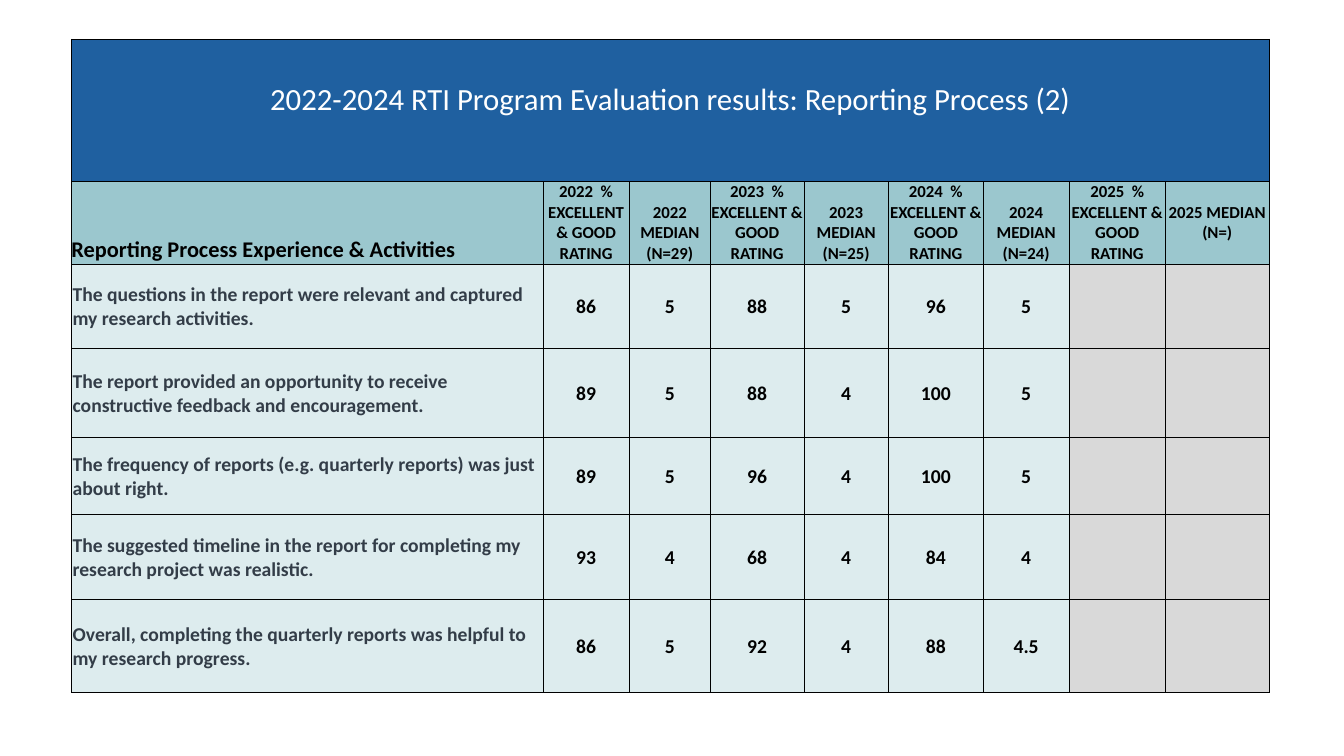
"""Build the reporting process evaluation slide with its results table."""
import collections
import pptx
import pptx.dml.color
import pptx.enum.text
import pptx.oxml
import pptx.oxml.ns
import pptx.util

Cm = pptx.util.Cm
ALIGN = pptx.enum.text.PP_ALIGN
ANCHOR = pptx.enum.text.MSO_ANCHOR

Theme = collections.namedtuple(
    "Theme", "font banner header body pending white black slate "
             "title_size topic_size heading_size body_size border_width")
theme = Theme("Calibri", "1F60A0", "9BC7CE", "DDECEE", "D9D9D9", "FFFFFF", "000000", "333D48",
              22, 16, 12, 14, 0.5)

column_widths = [11.88, 2.18, 2.04, 2.36, 2.13, 2.39, 2.16, 2.43, 2.61]
row_heights = [3.58, 2.08, 2.13, 2.24, 1.95, 2.14, 2.34]
respondents = {2022: "29", 2023: "25", 2024: "24", 2025: ""}
ratings = [
    ("The questions in the report were relevant and captured my research activities.",
     "86", "5", "88", "5", "96", "5"),
    ("The report provided an opportunity to receive constructive feedback and encouragement.",
     "89", "5", "88", "4", "100", "5"),
    ("The frequency of reports (e.g. quarterly reports) was just about right.",
     "89", "5", "96", "4", "100", "5"),
    ("The suggested timeline in the report for completing my research project was realistic.",
     "93", "4", "68", "4", "84", "4"),
    ("Overall, completing the quarterly reports was helpful to my research progress.",
     "86", "5", "92", "4", "88", "4.5"),
]


def style_cell(cell, fill, margins, anchor):
    """Set the fill, margins (left, top, right, bottom), anchor and borders of a cell."""
    cell.margin_left, cell.margin_top, cell.margin_right, cell.margin_bottom = map(Cm, margins)
    cell.vertical_anchor = anchor
    properties = cell._tc.get_or_add_tcPr()
    for side in ("lnL", "lnR", "lnT", "lnB"):
        properties.append(pptx.oxml.parse_xml(
            f'<a:{side} {pptx.oxml.ns.nsdecls("a")} w="{pptx.util.Pt(theme.border_width)}">'
            f'<a:solidFill><a:srgbClr val="{theme.black}"/></a:solidFill></a:{side}>'))
    cell.fill.solid()
    cell.fill.fore_color.rgb = pptx.dml.color.RGBColor.from_string(fill)


def write_cell(cell, wording, size, color, align, bold=True):
    """Write one run of text in a cell."""
    paragraph = cell.text_frame.paragraphs[0]
    paragraph.alignment = align
    run = paragraph.add_run()
    run.text = wording
    run.font.name = theme.font
    run.font.size = pptx.util.Pt(size)
    run.font.bold = bold
    run.font.color.rgb = pptx.dml.color.RGBColor.from_string(color)


presentation = pptx.Presentation()
presentation.slide_width, presentation.slide_height = Cm(33.87), Cm(19.05)
slide = presentation.slides.add_slide(presentation.slide_layouts[6])

results = slide.shapes.add_table(
    len(row_heights), len(column_widths), Cm(1.8), Cm(0.99),
    Cm(sum(column_widths)), Cm(sum(row_heights))).table
for column, width in zip(results.columns, column_widths):
    column.width = Cm(width)
for row, height in zip(results.rows, row_heights):
    row.height = Cm(height)

banner = results.cell(0, 0)
banner.merge(results.cell(0, len(column_widths) - 1))
for index in range(len(column_widths)):
    style_cell(results.cell(0, index), theme.banner, (0.2, 1.05, 0.2, 0.1), ANCHOR.TOP)
write_cell(banner, "2022-2024 RTI Program Evaluation results: Reporting Process (2)",
           theme.title_size, theme.white, ALIGN.CENTER, bold=False)

headings = ["Reporting Process Experience & Activities"]
for year, count in respondents.items():
    headings += [f"{year}  % EXCELLENT & GOOD RATING", f"{year} MEDIAN (N={count})"]
for index, heading in enumerate(headings):
    cell = results.cell(1, index)
    bottom = 0.52 if heading.endswith("(N=)") else 0
    style_cell(cell, theme.header, (0, 0, 0, bottom), ANCHOR.BOTTOM)
    write_cell(cell, heading, theme.heading_size if index else theme.topic_size, theme.black,
               ALIGN.CENTER if index else ALIGN.LEFT)

for row_index, answers in enumerate(ratings, start=2):
    for index in range(len(column_widths)):
        cell = results.cell(row_index, index)
        answered = index < len(answers)
        style_cell(cell, theme.body if answered else theme.pending,
                   (0.03, 0.03, 0.03, 0), ANCHOR.MIDDLE)
        if answered:
            write_cell(cell, answers[index], theme.body_size,
                       theme.black if index else theme.slate,
                       ALIGN.CENTER if index else ALIGN.LEFT)

presentation.save("out.pptx")
